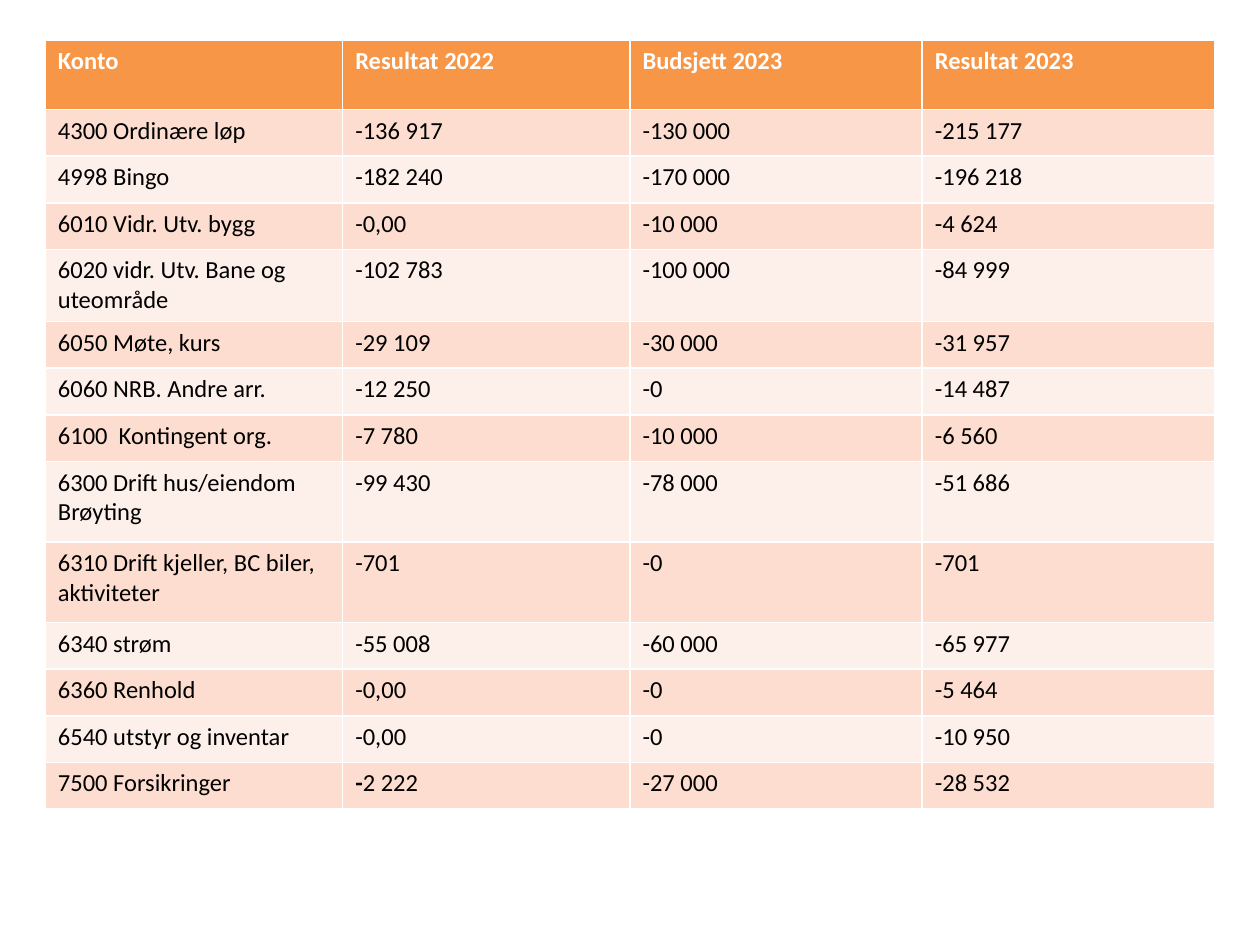
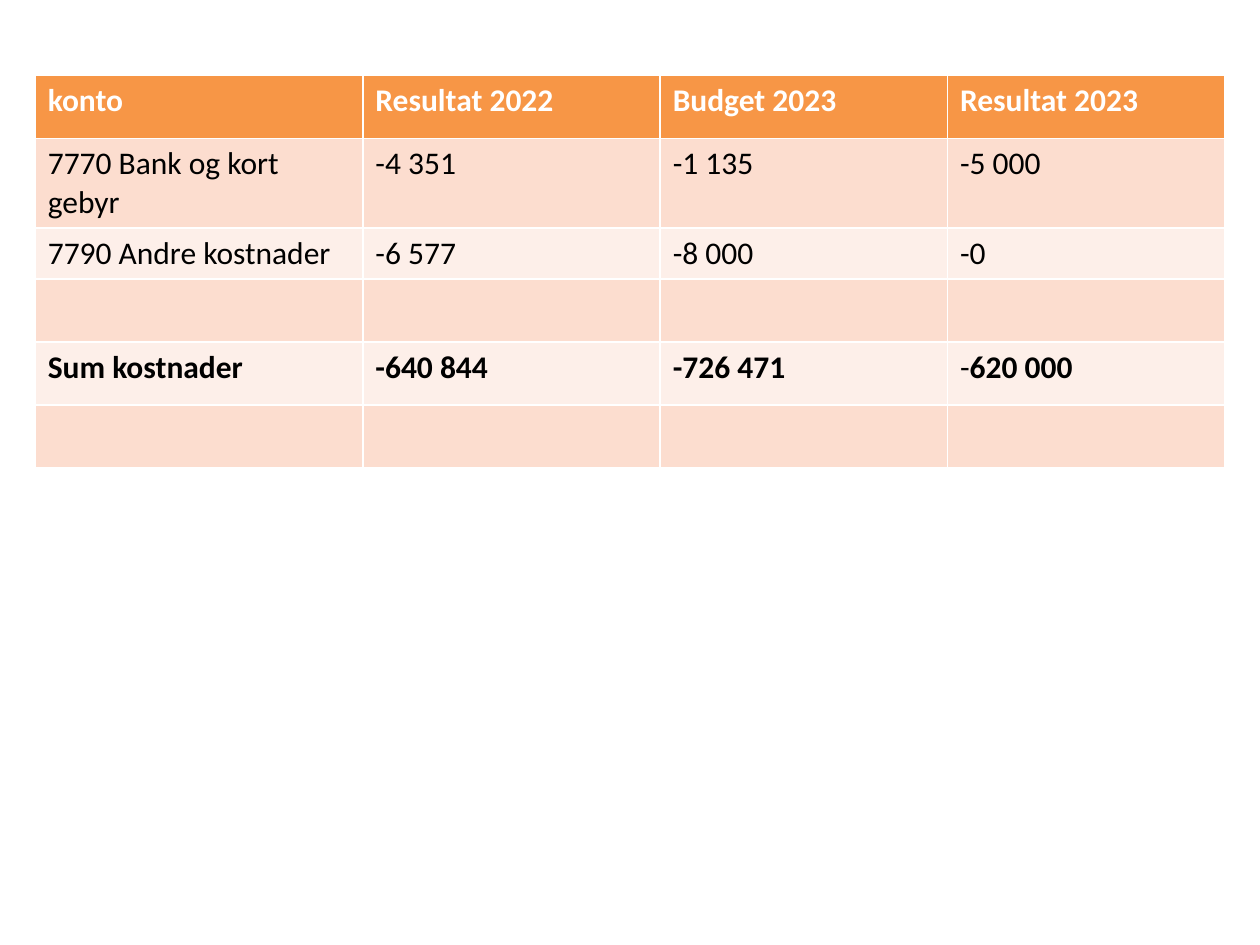
from pptx import Presentation, util as u
from pptx.dml.color import RGBColor

# Shared look
COLORS = {"header": "F79646", "odd": "FCDDCF", "even": "FDEFE9",
          "header_text": "FFFFFF", "text": "000000"}
FONT = "Calibri"
NBSP = chr(160)  # keeps the digit groups of an amount together
ROW = 0.37       # normal account row, in inches
SUM_ROW = 0.5

# Content: ** switches bold on and off inside a cell
ACCOUNTS = [
    ("Konto", "Resultat 2022", "Budsjett 2023", "Resultat 2023"),
    ("4300 Ordinære løp", "-136 917", "-130 000", "-215 177"),
    ("4998 Bingo", "-182 240", "-170 000", "-196 218"),
    ("6010 Vidr. Utv. bygg", "-0,00", "-10 000", "-4 624"),
    ("6020 vidr. Utv. Bane og uteområde", "-102 783", "-100 000", "-84 999"),
    ("6050 Møte, kurs", "-29 109", "-30 000", "-31 957"),
    ("6060 NRB. Andre arr.", "-12 250", "-0", "-14 487"),
    ("6100  Kontingent org.", "-7 780", "-10 000", "-6 560"),
    ("6300 Drift hus/eiendom Brøyting", "-99 430", "-78 000", "-51 686"),
    ("6310 Drift kjeller, BC biler, aktiviteter", "-701", "-0", "-701"),
    ("6340 strøm", "-55 008", "-60 000", "-65 977"),
    ("6360 Renhold", "-0,00", "-0", "-5 464"),
    ("6540 utstyr og inventar", "-0,00", "-0", "-10 950"),
    ("7500 Forsikringer", "**-**2 222", "-27 000", "-28 532"),
]
TOTALS = [
    ("konto", "Resultat 2022", "Budget 2023", "Resultat 2023"),
    ("7770 Bank og kort gebyr", "-4 351", "-1 135", "-5 000"),
    ("7790 Andre kostnader", "-6 577", "-8 000", "-0"),
    ("", "", "", ""),
    ("**Sum kostnader**", "**-640 844**", "**-726 471**", "-**620 000**"),
    ("", "", "", ""),
]

# One table per slide; "tall" lists the rows that differ from the normal height
TABLES = [
    dict(rows=ACCOUNTS, left=0.36, top=0.32, cols=(2.36, 2.28, 2.32, 2.32),
         size=14, row=ROW, tall={0: 0.55, 4: 0.53, 8: 0.64, 9: 0.64}),
    dict(rows=TOTALS, left=0.28, top=0.6, cols=(2.6, 2.36, 2.28, 2.2),
         size=18, row=SUM_ROW, tall={2: 0.25}),
]


def fill_cell(cell, content, row, size):
    band = "header" if row == 0 else "odd" if row % 2 else "even"
    cell.fill.solid()
    cell.fill.fore_color.rgb = RGBColor.from_string(COLORS[band])
    p = cell.text_frame.paragraphs[0]
    p.font.size = u.Pt(size)
    for i, part in enumerate(content.split("**")):
        if not part:
            continue
        r = p.add_run()
        r.text = part
        r.font.name, r.font.size = FONT, u.Pt(size)
        r.font.bold = row == 0 or i % 2 == 1
        color = COLORS["header_text" if row == 0 else "text"]
        r.font.color.rgb = RGBColor.from_string(color)


def add_accounts_table(s, rows, left, top, cols, size, row, tall):
    heights = [tall.get(i, row) for i in range(len(rows))]
    box = [u.Inches(v) for v in (left, top, sum(cols), sum(heights))]
    table = s.shapes.add_table(len(rows), len(cols), *box).table
    for col, width in zip(table.columns, cols):
        col.width = u.Inches(width)
    for y, (line, height) in enumerate(zip(rows, heights)):
        table.rows[y].height = u.Inches(height)
        for x, content in enumerate(line):
            if x and y:
                content = content.replace(" ", NBSP)
            fill_cell(table.cell(y, x), content, y, size)


def main():
    prs = Presentation()
    prs.slide_width, prs.slide_height = u.Inches(10), u.Inches(7.5)
    for spec_of_table in TABLES:
        s = prs.slides.add_slide(prs.slide_layouts[6])
        add_accounts_table(s, **spec_of_table)
    prs.save("out.pptx")


if __name__ == "__main__":
    main()
